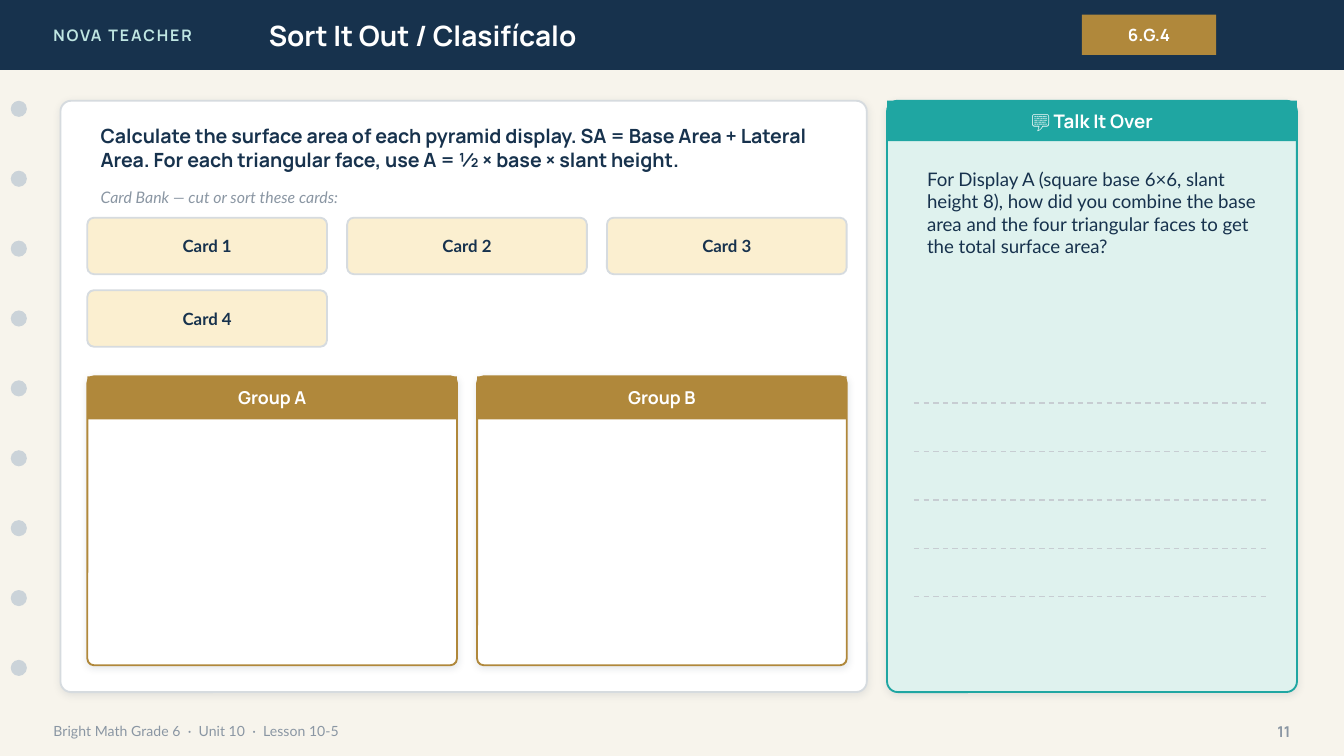
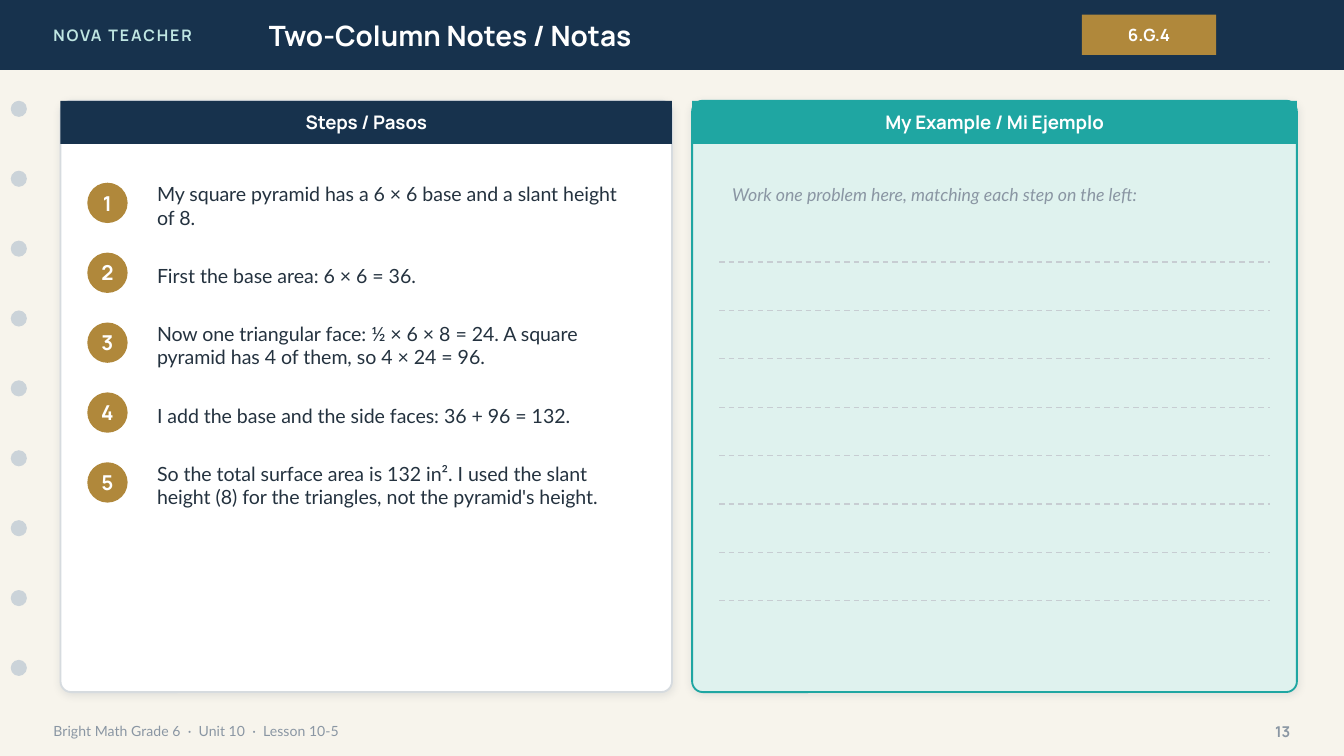
from dataclasses import dataclass
from typing import NamedTuple, Optional

from lxml import etree
from pptx import Presentation
from pptx.dml.color import RGBColor
from pptx.enum.dml import MSO_LINE_DASH_STYLE
from pptx.enum.shapes import MSO_CONNECTOR, MSO_SHAPE
from pptx.enum.text import MSO_ANCHOR, MSO_AUTO_SIZE, PP_ALIGN
from pptx.oxml.ns import qn
from pptx.util import Inches, Pt

RECT, ROUND, OVAL = MSO_SHAPE.RECTANGLE, MSO_SHAPE.ROUNDED_RECTANGLE, MSO_SHAPE.OVAL
STRAIGHT, DASH = MSO_CONNECTOR.STRAIGHT, MSO_LINE_DASH_STYLE.DASH
LEFT, MID, RIGHT = PP_ALIGN.LEFT, PP_ALIGN.CENTER, PP_ALIGN.RIGHT
TOP, CENTER = MSO_ANCHOR.TOP, MSO_ANCHOR.MIDDLE
FIXED = MSO_AUTO_SIZE.NONE

WIDE = Inches(10)
HIGH = WIDE * 9 // 16
CELL = WIDE // 100  # the grid has 100 square cells across the slide
GAP = 1.5
PITCH = 5.2  # rows from one punch hole, or one step, to the next
RULE = 3.6  # rows from one writing line to the next


class Style(NamedTuple):
    size: float
    font: str
    color: str
    bold: bool = False
    slant: bool = False
    track: int = 0


class Theme(NamedTuple):
    """Colours and type styles of the deck."""
    paper: str = "F7F4EC"
    white: str = "FFFFFF"
    navy: str = "17324D"
    gold: str = "B0883B"
    teal: str = "1FA6A2"
    mint: str = "DFF2EE"
    cream: str = "FBEFD0"
    edge: str = "D6DBDF"
    hole: str = "CBD3D9"
    rule: str = "C7CDD2"
    shade: str = "1C2E42"
    brand: Style = Style(8.5, "Manrope", "BFE6E2", True, track=100)
    title: Style = Style(15, "Manrope", "FFFFFF", True)
    badge: Style = Style(9, "Manrope", "FFFFFF", True)
    foot: Style = Style(7.5, "Lato", "8A96A3")
    page: Style = Style(8, "Manrope", "8A96A3", True)
    task: Style = Style(10.5, "Manrope", "17324D", True)
    hint: Style = Style(8.5, "Lato", "8A96A3", slant=True)
    card: Style = Style(9, "Lato", "17324D", True)
    group: Style = Style(9.5, "Manrope", "FFFFFF", True)
    head: Style = Style(10, "Manrope", "FFFFFF", True)
    ask: Style = Style(10, "Lato", "17324D")
    digit: Style = Style(11, "Manrope", "FFFFFF", True)
    step: Style = Style(10.5, "Lato", "24323F")
    prompt: Style = Style(9.5, "Lato", "8A96A3", slant=True)


T = Theme()


class Box(NamedTuple):
    """A place in grid columns and rows."""
    col: float
    row: float
    cols: float
    rows: float

    def emu(self) -> list[int]:
        return [round(n * CELL) for n in self]


@dataclass(frozen=True)
class Panel:
    box: Box
    fill: str
    edge: str
    curve: float
    head: str = ""
    band: str = ""
    tall: float = 3.2
    style: Style = T.head


MAIN = Box(4.5, 7.5, 60, 44)
BANK = Box(6.5, 16.2, 56.5, 4.2)
BINS = Box(6.5, 28, 56.5, 21.5)

SORT = Panel(MAIN, T.white, T.edge, 0.018)
TALK = Panel(Box(66, 7.5, 30.5, 44), T.mint, T.teal, 0.026, "💬 Talk It Over", T.teal, 3)
NOTES = Panel(Box(4.5, 7.5, 45.5, 44), T.white, T.edge, 0.018, "Steps / Pasos", T.navy)
WORK = Panel(Box(51.5, 7.5, 45, 44), T.mint, T.teal, 0.018, "My Example / Mi Ejemplo", T.teal)

CARDS = ["Card 1", "Card 2", "Card 3", "Card 4"]
GROUPS = ["Group A", "Group B"]
STEPS = [
    "My square pyramid has a 6 × 6 base and a slant height of 8.",
    "First the base area: 6 × 6 = 36.",
    "Now one triangular face: ½ × 6 × 8 = 24. A square pyramid has 4 of them, so 4 × 24 = 96.",
    "I add the base and the side faces: 36 + 96 = 132.",
    "So the total surface area is 132 in². I used the slant height (8) for the triangles, "
    "not the pyramid's height.",
]


def split(box: Box, count: int, drop: float = 0) -> list[Box]:
    """Cut a box into equal columns; drop moves them down."""
    wide = (box.cols - GAP * (count - 1)) / count
    return [Box(box.col + i * (wide + GAP), box.row + drop, wide, box.rows)
            for i in range(count)]


def write(shape, text: str, style: Style, align=LEFT, anchor=CENTER) -> None:
    frame = shape.text_frame
    frame.word_wrap = True
    frame.auto_size = FIXED
    frame.vertical_anchor = anchor
    para = frame.paragraphs[0]
    para.alignment = align
    run = para.add_run()
    run.text = text
    font = run.font
    font.name, font.size = style.font, Pt(style.size)
    font.bold, font.italic = style.bold, style.slant
    font.color.rgb = RGBColor.from_string(style.color)
    if style.track:
        run._r.get_or_add_rPr().set("spc", str(style.track))


def label(slide, box: Box, text: str, style: Style, align=LEFT, anchor=CENTER) -> None:
    write(slide.shapes.add_textbox(*box.emu()), text, style, align, anchor)


def block(slide, kind, box: Box, fill: str, edge: Optional[str] = None,
          curve: Optional[float] = None):
    """Add a flat shape with an optional outline and corner curve."""
    shape = slide.shapes.add_shape(kind, *box.emu())
    shape.shadow.inherit = False
    shape.fill.solid()
    shape.fill.fore_color.rgb = RGBColor.from_string(fill)
    if edge:
        shape.line.color.rgb = RGBColor.from_string(edge)
        shape.line.width = Pt(1)
    else:
        shape.line.fill.background()
    if curve is not None:
        shape.adjustments[0] = curve
    return shape


def shade(shape) -> None:
    """Give a flat shape a soft shadow below it."""
    effects = shape.element.spPr.find(qn("a:effectLst"))
    outer = etree.SubElement(effects, qn("a:outerShdw"), blurRad=str(Pt(4)),
                             dist=str(Pt(1)), dir="5400000", algn="t", rotWithShape="0")
    color = etree.SubElement(outer, qn("a:srgbClr"), val=T.shade)
    etree.SubElement(color, qn("a:alpha"), val="10000")


def panel(slide, item: Panel) -> None:
    shade(block(slide, ROUND, item.box, item.fill, item.edge, item.curve))
    if item.head:
        band = block(slide, RECT, item.box._replace(rows=item.tall), item.band)
        write(band, item.head, item.style, MID)


def rules(slide, col: float, end: float, row: float, count: int) -> None:
    """Draw dashed lines to write on."""
    for i in range(count):
        y = round((row + i * RULE) * CELL)
        line = slide.shapes.add_connector(STRAIGHT, round(col * CELL), y, round(end * CELL), y)
        line.line.color.rgb = RGBColor.from_string(T.rule)
        line.line.width = Pt(0.75)
        line.line.dash_style = DASH
        etree.SubElement(line.element.spPr, qn("a:effectLst"))


def start(deck, title: str, page: int):
    """Add a slide with the shared band, title, holes and footer."""
    slide = deck.slides.add_slide(deck.slide_layouts[5])
    slide.background.fill.solid()
    slide.background.fill.fore_color.rgb = RGBColor.from_string(T.paper)
    band = block(slide, RECT, Box(0, 0, 100, 5.2), T.navy)
    label(slide, Box(3, 0, 24, 5.2), "NOVA TEACHER", T.brand)
    name = slide.shapes.title
    name.left, name.top, name.width, name.height = Box(19, 0, 56, 5.2).emu()
    write(name, title, T.title)
    band.element.addnext(name.element)
    badge = block(slide, RECT, Box(80.5, 1.1, 10, 3), T.gold)
    write(badge, "6.G.4", T.badge, MID)
    for i in range(9):
        block(slide, OVAL, Box(0.8, 7.5 + i * PITCH, 1.2, 1.2), T.hole)
    label(slide, Box(3, 53, 70, 2.8), "Bright Math Grade 6  ·  Unit 10  ·  Lesson 10-5", T.foot)
    label(slide, Box(92, 53, 5, 2.8), str(page), T.page, RIGHT)
    return slide


def sort(deck) -> None:
    slide = start(deck, "Sort It Out / Clasifícalo", 11)
    panel(slide, SORT)
    label(slide, Box(6.5, 9, 56, 4),
          "Calculate the surface area of each pyramid display. SA = Base Area + Lateral Area. "
          "For each triangular face, use A = ½ × base × slant height.", T.task)
    label(slide, Box(6.5, 13.5, 56, 2.4), "Card Bank — cut or sort these cards:", T.hint)
    slots = split(BANK, 3) + split(BANK, 3, 5.4)
    for box, text in zip(slots, CARDS):
        write(block(slide, ROUND, box, T.cream, T.edge, 0.119), text, T.card, MID)
    for box, text in zip(split(BINS, 2), GROUPS):
        panel(slide, Panel(box, T.white, T.gold, 0.023, text, T.gold, style=T.group))
    panel(slide, TALK)
    label(slide, Box(68, 12, 27, 15),
          "For Display A (square base 6×6, slant height 8), how did you combine the base area "
          "and the four triangular faces to get the total surface area?", T.ask, anchor=TOP)
    rules(slide, 68, 94.5, 30, 5)


def notes(deck) -> None:
    slide = start(deck, "Two-Column Notes / Notas", 13)
    panel(slide, NOTES)
    for i, text in enumerate(STEPS):
        row = 13 + i * PITCH
        disc = block(slide, OVAL, Box(6.5, row + 0.6, 3, 3), T.gold)
        frame = disc.text_frame
        frame.margin_left = frame.margin_right = frame.margin_top = frame.margin_bottom = 0
        write(disc, str(i + 1), T.digit, MID)
        label(slide, Box(10.7, row, 37.8, 4.6), text, T.step)
    panel(slide, WORK)
    label(slide, Box(53.5, 12.5, 41, 4),
          "Work one problem here, matching each step on the left:", T.prompt)
    rules(slide, 53.5, 94.5, 19.5, 8)


def main() -> None:
    deck = Presentation()
    deck.slide_width, deck.slide_height = WIDE, HIGH
    sort(deck)
    notes(deck)
    deck.save("out.pptx")


if __name__ == "__main__":
    main()
